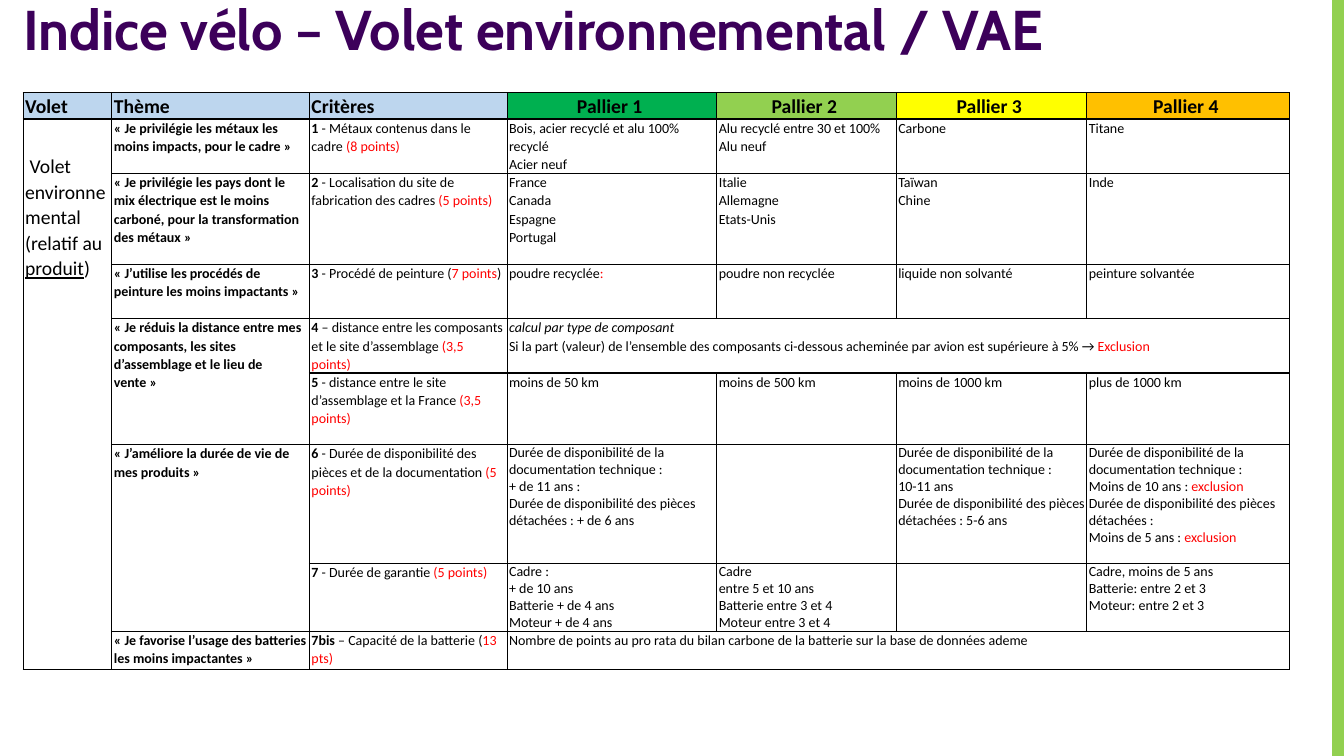
from lxml.etree import SubElement as Sub
from pptx import Presentation
from pptx.dml.color import RGBColor as Rgb
from pptx.enum.shapes import MSO_SHAPE as Shape
from pptx.enum.text import MSO_ANCHOR as Anchor, PP_ALIGN as Align
from pptx.oxml.ns import qn
from pptx.util import Inches, Pt

COLORS = {
    "black": "000000", "white": "FFFFFF", "red": "FF0000", "plum": "3C005A",
    "blue": "BDD6EE", "green": "00B050", "lime": "92D050",
    "yellow": "FFFF00", "orange": "FFC000",
}
HARD = chr(160)  # no-break space
COLS = [0.88, 1.96, 1.96, 2.08, 1.78, 1.89, 2.01]
ROWS = [0.26, 0.54, 0.9, 0.54, 0.54, 0.71, 1.18, 0.67, 0.38]
# row, column, last row, last column
SPANS = [(1, 0, 8, 0), (4, 1, 5, 1), (6, 1, 7, 1), (4, 3, 4, 6), (8, 3, 8, 6)]
HEADS = [("Volet", "blue"), ("Thème", "blue"), ("Critères", "blue"),
         ("Pallier 1 ", "green"), ("Pallier 2 ", "lime"),
         ("Pallier 3 ", "yellow"), ("Pallier 4 ", "orange")]


def red(words):
    return words, {"color": "red"}


def theme(words):
    return [[(f"«{HARD}{words}{HARD}»", {"bold": True})]]


def rule(mark, words, score, end=""):
    """Criterion: bold number, plain label, red score."""
    return [[(mark, {"bold": True}), words, red(score), end]]


TECH = "Durée de disponibilité de la documentation technique :\n"
PARTS = f"Durée de disponibilité des pièces détachées{HARD}:"

# Each cell is a list of paragraphs, each paragraph a string or a list of runs.
BODY = [
    [[[f"{HARD}Volet environnemental (relatif au ",
       ("produit", {"under": True}), ")"]],
     theme("Je privilégie les métaux les moins impacts, pour le cadre"),
     rule("1", " - Métaux contenus dans le cadre ", "(8 points)"),
     ["Bois, acier recyclé et alu 100% recyclé", "Acier neuf"],
     ["Alu recyclé entre 30 et 100%", "Alu neuf"], ["Carbone"], ["Titane"]],
    [None,
     theme("Je privilégie les pays dont le mix électrique est le moins carboné, "
           "pour la transformation des métaux"),
     rule("2", " - Localisation du site de fabrication des cadres ", "(5 points)"),
     ["France", "Canada", "Espagne", "Portugal"],
     ["Italie", "Allemagne", "Etats-Unis"], ["Taïwan", "Chine"], ["Inde"]],
    [None,
     theme("J’utilise les procédés de peinture les moins impactants"),
     rule("3", " - Procédé de peinture (", "7 points", ")"),
     [["poudre recyclée", red(":")]], ["poudre non recyclée"],
     ["liquide non solvanté"], ["peinture solvantée"]],
    [None,
     theme("Je réduis la distance entre mes composants, les sites d’assemblage "
           "et le lieu de vente"),
     rule("4", " – distance entre les composants et le site d’assemblage ",
          "(3,5 points)"),
     [[("calcul par type de composant", {"italic": True})],
      ["Si la part (valeur) de l’ensemble des composants ci-dessous acheminée "
       "par avion est supérieure à 5% → ", red("Exclusion")]],
     None, None, None],
    [None, None,
     rule("5", " - distance entre le site d’assemblage et la France ",
          "(3,5 points)"),
     ["moins de 50 km"], ["moins de 500 km"], ["moins de 1000 km"],
     ["plus de 1000 km"]],
    [None,
     theme("J’améliore la durée de vie de mes produits"),
     rule("6", " - Durée de disponibilité des pièces et de la documentation ",
          "(5 points)"),
     [f"{TECH}+ de 11 ans :\n{PARTS} + de 6 ans"], None,
     [f"{TECH}10-11 ans", f"{PARTS} 5-6 ans"],
     [[f"{TECH}Moins de 10 ans : ", red("exclusion")], PARTS,
      ["Moins de 5 ans : ", red("exclusion")]]],
    [None, None,
     rule("7", " - Durée de garantie ", "(5 points)"),
     ["Cadre :\n+ de 10 ans\nBatterie + de 4 ans\nMoteur + de 4 ans"],
     ["Cadre", "entre 5 et 10 ans", "Batterie entre 3 et 4",
      "Moteur entre 3 et 4"], None,
     ["Cadre, moins de 5 ans\nBatterie: entre 2 et 3", "Moteur: entre 2 et 3"]],
    [None,
     theme("Je favorise l’usage des batteries les moins impactantes"),
     rule("7bis", " – Capacité de la batterie (", "13 pts)"),
     ["Nombre de points au pro rata du bilan carbone de la batterie sur la base "
      "de données ademe"],
     None, None, None],
]


def write(frame, paras, size=10, font="Calibri", color="black", bold=False,
          align=Align.LEFT, lead=1.07):
    """Fill a text frame; a newline inside a run becomes a line break."""
    frame.word_wrap = True
    for i, runs in enumerate(paras):
        para = frame.add_paragraph() if i else frame.paragraphs[0]
        para.alignment, para.line_spacing = align, lead
        for item in [runs] if isinstance(runs, str) else runs:
            words, form = (item, {}) if isinstance(item, str) else item
            for j, line in enumerate(words.split("\n") if words else []):
                if j:
                    para.add_line_break()
                run = para.add_run()
                run.text = line
                face = run.font
                face.name, face.size = font, Pt(size)
                face.bold = form.get("bold", bold)
                face.italic = form.get("italic", False)
                face.underline = form.get("under", False)
                face.color.rgb = Rgb.from_string(COLORS[form.get("color", color)])


class Deck:
    def __init__(self):
        self.show = Presentation()
        self.show.slide_width = Inches(13.33)
        self.show.slide_height = Inches(7.5)
        self.slide = self.show.slides.add_slide(self.show.slide_layouts[6])

    def bar(self, color, *box):
        bar = self.slide.shapes.add_shape(Shape.RECTANGLE, *map(Inches, box))
        bar.shadow.inherit = False
        bar.fill.solid()
        bar.fill.fore_color.rgb = Rgb.from_string(COLORS[color])
        bar.line.color.rgb = Rgb.from_string(COLORS[color])
        bar.line.width = Pt(1)

    def title(self, words, *box):
        frame = self.slide.shapes.add_textbox(*map(Inches, box)).text_frame
        frame.margin_left = frame.margin_right = 0
        frame.margin_top = frame.margin_bottom = 0
        write(frame, [words], size=40, font="Cabin", color="plum", bold=True,
              lead=0.9)

    def table(self, left, top):
        grid = self.slide.shapes.add_table(
            len(ROWS), len(COLS), Inches(left), Inches(top),
            Inches(sum(COLS)), Inches(sum(ROWS))).table
        grid.first_row = grid.horz_banding = False
        for col, width in zip(grid.columns, COLS):
            col.width = Inches(width)
        for row, height in zip(grid.rows, ROWS):
            row.height = Inches(height)
        for r, c, r2, c2 in SPANS:
            grid.cell(r, c).merge(grid.cell(r2, c2))
        for c, (words, color) in enumerate(HEADS):
            cell = grid.cell(0, c)
            self.dress(cell, color)
            write(cell.text_frame, [words], size=14, bold=True,
                  align=Align.CENTER if c > 2 else Align.LEFT)
        for r, cells in enumerate(BODY, 1):
            for c, paras in enumerate(cells):
                cell = grid.cell(r, c)
                self.dress(cell, "white")
                tight = r in (6, 7) and c > 2
                write(cell.text_frame, paras or [], size=10 if c else 14,
                      lead=1.0 if tight else 1.07)
        grid.cell(1, 0).margin_top = Inches(0.34)

    def dress(self, cell, color):
        """Set the margins, fill and borders of a cell."""
        cell.margin_left = cell.margin_right = Inches(0.02)
        cell.margin_top = cell.margin_bottom = 0
        cell.vertical_anchor = Anchor.TOP
        cell.fill.solid()
        cell.fill.fore_color.rgb = Rgb.from_string(COLORS[color])
        props = cell._tc.get_or_add_tcPr()
        for i, side in enumerate(("lnL", "lnR", "lnT", "lnB")):
            line = Sub(props, qn(f"a:{side}"), w=str(Pt(1)))
            Sub(Sub(line, qn("a:solidFill")), qn("a:srgbClr"),
                val=COLORS["black"])
            props.insert(i, line)


def main():
    deck = Deck()
    deck.bar("lime", 13.22, 0, 0.11, 7.5)
    deck.table(0.23, 0.92)
    deck.title("Indice vélo – Volet environnemental / VAE", 0.23, 0.02, 12.72, 0.71)
    deck.show.save("out.pptx")


if __name__ == "__main__":
    main()
